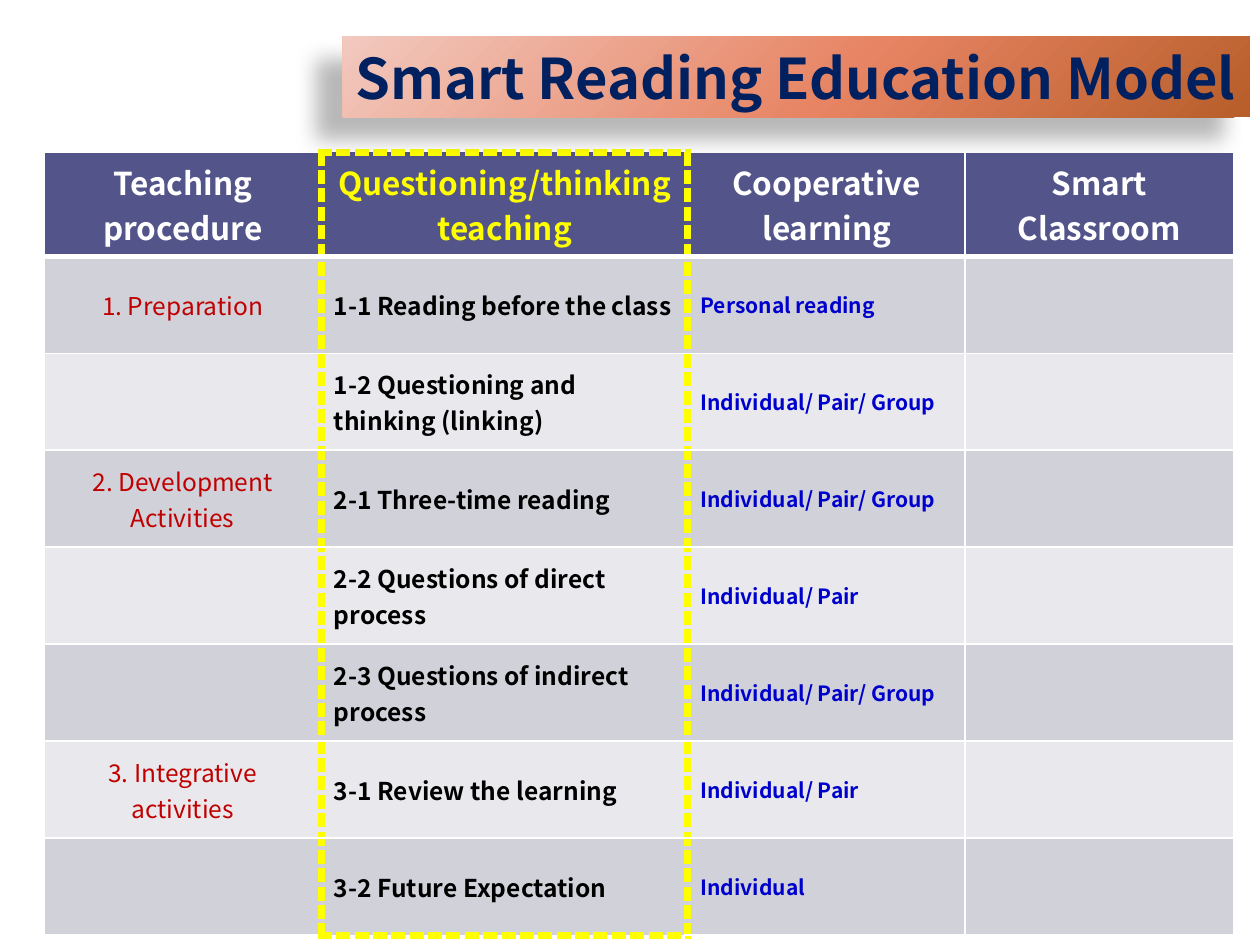
from dataclasses import dataclass

from lxml import etree
from pptx import Presentation
from pptx.dml.color import RGBColor
from pptx.enum.shapes import MSO_SHAPE
from pptx.enum.text import MSO_ANCHOR, PP_ALIGN
from pptx.oxml import parse_xml
from pptx.oxml.ns import qn
from pptx.util import Inches, Pt

RECT = MSO_SHAPE.RECTANGLE
MIDDLE = MSO_ANCHOR.MIDDLE
LEFT, CENTER = PP_ALIGN.LEFT, PP_ALIGN.CENTER
NS = "http://schemas.openxmlformats.org/drawingml/2006/main"


@dataclass(frozen=True)
class Theme:
    font: str = "Noto Sans CJK SC"
    white: str = "FFFFFF"
    black: str = "000000"
    yellow: str = "FFFF00"
    navy: str = "002060"
    red: str = "C00000"
    blue: str = "0000CC"
    head: str = "53548A"
    bands: tuple = ("D1D1DA", "E9E9ED")
    fade: tuple = ((0, "F2C9BF"), (55, "E78463"), (100, "B75E2A"))
    title: int = 32
    large: int = 18
    body: int = 14
    small: int = 12


@dataclass(frozen=True)
class Edge:
    color: str
    width: float
    dash: str = "solid"


@dataclass(frozen=True)
class Step:
    phase: str
    task: str
    mode: str


T = Theme()
THIN, THICK = Edge(T.white, 1), Edge(T.white, 3)
FRAME = Edge(T.yellow, 4.5, "lgDash")
MARKED = 1  # column framed in yellow
WIDTHS = (2.2, 2.91, 2.2, 2.13)
ROW = 0.77
HEADS = ("Teaching procedure", "Questioning/thinking teaching",
         "Cooperative learning", "Smart Classroom")
STEPS = (
    Step("1. Preparation", "1-1 Reading before the class", "Personal reading"),
    Step("", "1-2 Questioning and thinking (linking)", "Individual/ Pair/ Group"),
    Step("2. Development Activities", "2-1 Three-time reading",
         "Individual/ Pair/ Group"),
    Step("", "2-2 Questions of direct process", "Individual/ Pair"),
    Step("", "2-3 Questions of indirect process", "Individual/ Pair/ Group"),
    Step("3. Integrative activities", "3-1 Review the learning",
         "Individual/ Pair"),
    Step("", "3-2 Future Expectation", "Individual"),
)


def write(frame, text: str, *, size: int, color: str, bold: bool = True,
          align=LEFT) -> None:
    para = frame.paragraphs[0]
    para.alignment = align
    run = para.add_run()
    run.text = text
    run.font.name = T.font
    run.font.size = Pt(size)
    run.font.bold = bold
    run.font.color.rgb = RGBColor.from_string(color)


def set_edges(cell, edges: dict[str, Edge]) -> None:
    props = cell._tc.get_or_add_tcPr()
    for spot, side in enumerate("LRTB"):
        edge = edges[side]
        props.insert(spot, parse_xml(
            f'<a:ln{side} xmlns:a="{NS}" w="{Pt(edge.width)}">'
            f'<a:solidFill><a:srgbClr val="{edge.color}"/></a:solidFill>'
            f'<a:prstDash val="{edge.dash}"/></a:ln{side}>'))


def pick_edges(row: int, col: int) -> dict[str, Edge]:
    last = len(STEPS)
    inside = col == MARKED
    top = FRAME if inside and row == 0 else THICK if row == 1 else THIN
    base = FRAME if inside and row == last else THICK if row == 0 else THIN
    return {"L": FRAME if col in (MARKED, MARKED + 1) else THIN,
            "R": FRAME if col in (MARKED - 1, MARKED) else THIN,
            "T": top, "B": base}


def draw_cell(cell, row: int, col: int, fill: str) -> None:
    cell.vertical_anchor = MIDDLE
    cell.fill.solid()
    cell.fill.fore_color.rgb = RGBColor.from_string(fill)
    set_edges(cell, pick_edges(row, col))


def draw_table(slide) -> None:
    count = len(STEPS) + 1
    table = slide.shapes.add_table(
        count, len(WIDTHS), Inches(0.35), Inches(1.21),
        Inches(sum(WIDTHS)), Inches(ROW * count)).table
    for column, width in zip(table.columns, WIDTHS):
        column.width = Inches(width)
    for line in table.rows:
        line.height = Inches(ROW)

    # Header row
    for col, text in enumerate(HEADS):
        cell = table.cell(0, col)
        draw_cell(cell, 0, col, T.head)
        write(cell.text_frame, text, size=T.large, align=CENTER,
              color=T.yellow if col == MARKED else T.white)

    # Lesson steps
    looks = (dict(size=T.body, color=T.red, bold=False, align=CENTER),
             dict(size=T.body, color=T.black),
             dict(size=T.small, color=T.blue))
    for row, step in enumerate(STEPS, 1):
        for col in range(len(WIDTHS)):
            draw_cell(table.cell(row, col), row, col, T.bands[(row - 1) % 2])
        for col, text in enumerate((step.phase, step.task, step.mode)):
            if text:
                write(table.cell(row, col).text_frame, text, **looks[col])


def draw_title(slide) -> None:
    bar = slide.shapes.add_shape(
        RECT, Inches(2.72), Inches(0.29), Inches(7.2), Inches(0.64))
    bar.line.fill.background()
    frame = bar.text_frame
    frame.word_wrap = False
    frame.vertical_anchor = MIDDLE
    write(frame, "Smart Reading Education Model", size=T.title, color=T.navy)

    # Radial fade from the upper left
    stops = "".join(f'<a:gs pos="{at * 1000}"><a:srgbClr val="{color}"/></a:gs>'
                    for at, color in T.fade)
    props = bar._element.spPr
    props.find(qn("a:prstGeom")).addnext(parse_xml(
        f'<a:gradFill xmlns:a="{NS}" rotWithShape="1"><a:gsLst>{stops}</a:gsLst>'
        '<a:path path="circle"><a:fillToRect l="-40000" t="-90000" '
        'r="140000" b="190000"/></a:path></a:gradFill>'))

    # Soft shadow to the lower left
    bar.shadow.inherit = False
    glow = etree.SubElement(
        props.find(qn("a:effectLst")), qn("a:outerShdw"),
        blurRad=str(Pt(11.8)), dist=str(Pt(19.7)), dir=str(141 * 60000),
        algn="ctr", rotWithShape="0")
    tint = etree.SubElement(glow, qn("a:srgbClr"), val=T.black)
    etree.SubElement(tint, qn("a:alpha"), val="28000")


def main() -> None:
    deck = Presentation()
    deck.slide_width, deck.slide_height = Inches(10), Inches(7.5)
    slide = deck.slides.add_slide(deck.slide_layouts[6])
    draw_table(slide)
    draw_title(slide)
    deck.save("out.pptx")


if __name__ == "__main__":
    main()
